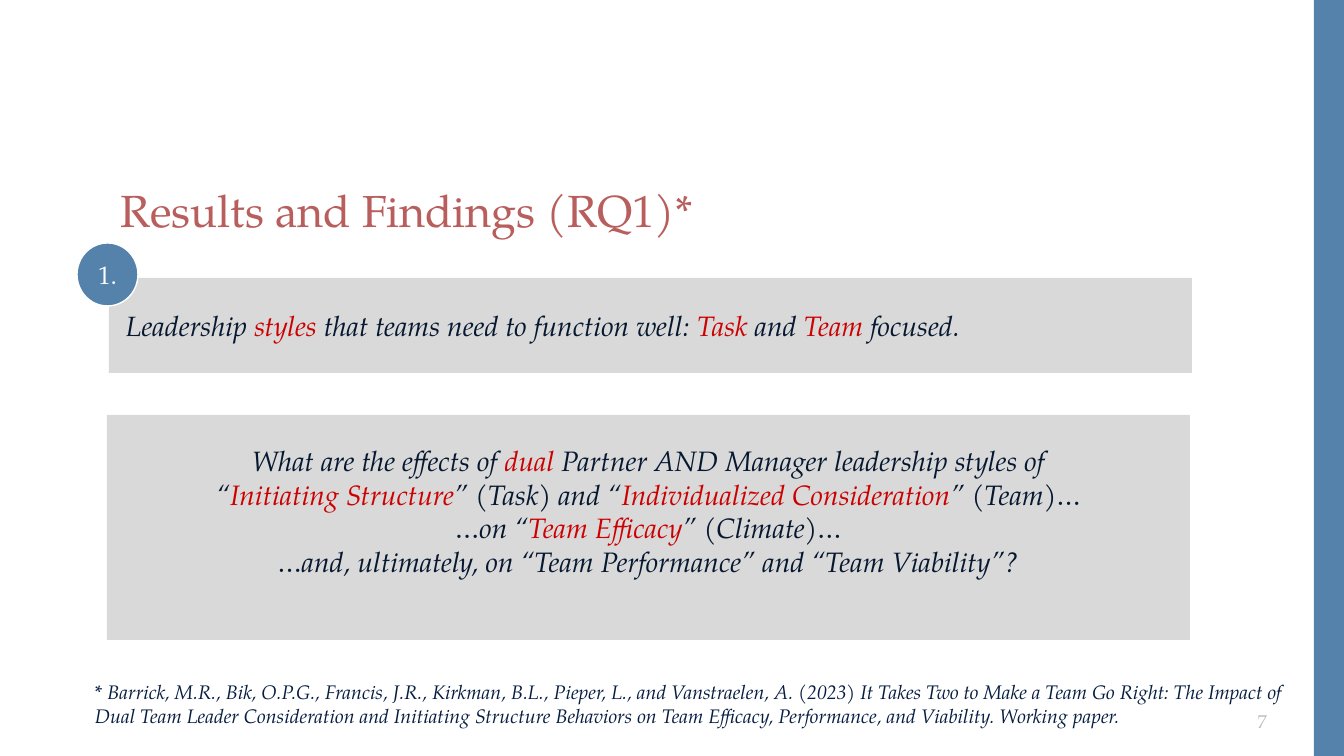
from dataclasses import dataclass

from pptx import Presentation
from pptx.dml.color import RGBColor
from pptx.enum.shapes import MSO_SHAPE as Shape
from pptx.enum.text import MSO_ANCHOR as Anchor, PP_ALIGN as Align
from pptx.util import Emu, Pt

EMU_PER_PX = 914400 / 100.8
ACCENT_MARK = "|"
LINE_BREAK = "\v"


@dataclass(frozen=True)
class Theme:
    font: str = "TeX Gyre Pagella"
    blue: str = "5482AB"
    white: str = "FFFFFF"
    panel: str = "D9D9D9"
    title: str = "B85E5C"
    body: str = "061830"
    accent: str = "CC0000"
    footnote: str = "061D41"
    number: str = "BFBFBF"
    title_size: float = 32
    body_size: float = 20
    badge_size: float = 18
    footnote_size: float = 14
    number_size: float = 13.3


THEME = Theme()

STYLES_FINDING = [
    "Leadership |styles| that teams need to function well: |Task| and |Team| focused."
]
EFFECTS_QUESTION = [
    "What are the effects of |dual| Partner AND Manager leadership styles of\v"
    "“|Initiating Structure|” (Task) and “|Individualized Consideration|” (Team)…",
    "…on “|Team Efficacy|” (Climate)…",
    "…and, ultimately, on “Team Performance” and “Team Viability”?",
]
CITATION = (
    "* Barrick, M.R., Bik, O.P.G., Francis, J.R., Kirkman, B.L., Pieper, L., and "
    "Vanstraelen, A. (2023) It Takes Two to Make a Team Go Right: The Impact of Dual "
    "Team Leader Consideration and Initiating Structure Behaviors on Team Efficacy, "
    "Performance, and Viability. Working paper."
)


def px(length):
    return Emu(round(length * EMU_PER_PX))


def color(value):
    return RGBColor.from_string(value)


def set_frame(shape, anchor, left=10, bottom=5):
    frame = shape.text_frame
    frame.word_wrap = True
    frame.vertical_anchor = anchor
    frame.margin_left, frame.margin_right = px(left), px(10)
    frame.margin_top, frame.margin_bottom = px(5), px(bottom)
    return frame


def style_paragraph(paragraph, size, text_color, align=Align.LEFT, italic=False):
    paragraph.alignment = align
    font = paragraph.font
    font.name, font.size, font.italic = THEME.font, Pt(size), italic
    font.color.rgb = color(text_color)


def add_marked_text(paragraph, text):
    for index, part in enumerate(text.split(ACCENT_MARK)):
        for line_index, line in enumerate(part.split(LINE_BREAK)):
            if line_index:
                paragraph.add_line_break()
            run = paragraph.add_run()
            run.text = line
            if index % 2:
                run.font.color.rgb = color(THEME.accent)


def add_label(slide, box, text, size, text_color, anchor=Anchor.TOP, **style):
    shape = slide.shapes.add_textbox(*map(px, box))
    paragraph = set_frame(shape, anchor).paragraphs[0]
    paragraph.text = text
    style_paragraph(paragraph, size, text_color, **style)
    return paragraph


def add_filled(shapes, kind, box, fill):
    shape = shapes.add_shape(kind, *map(px, box))
    shape.shadow.inherit = False
    shape.fill.solid()
    shape.fill.fore_color.rgb = color(fill)
    shape.line.fill.background()
    return shape


def add_panel(shapes, box, texts, align, **margins):
    shape = add_filled(shapes, Shape.RECTANGLE, box, THEME.panel)
    frame = set_frame(shape, Anchor.MIDDLE, **margins)
    for index, text in enumerate(texts):
        paragraph = frame.add_paragraph() if index else frame.paragraphs[0]
        style_paragraph(paragraph, THEME.body_size, THEME.body, align, italic=True)
        add_marked_text(paragraph, text)


def add_badge(shapes, box, text):
    shape = add_filled(shapes, Shape.OVAL, box, THEME.blue)
    shape.line.color.rgb = color(THEME.white)
    shape.line.width = Pt(1)
    paragraph = set_frame(shape, Anchor.MIDDLE).paragraphs[0]
    paragraph.text = text
    style_paragraph(paragraph, THEME.badge_size, THEME.white, Align.CENTER)


def main():
    presentation = Presentation()
    presentation.slide_width, presentation.slide_height = px(1344), px(756)
    slide = presentation.slides.add_slide(presentation.slide_layouts[6])

    add_filled(slide.shapes, Shape.RECTANGLE, (1314, 0, 30, 756), THEME.blue)
    title = add_label(slide, (111, 184, 1127, 103), "Results and Findings (RQ1)*",
                      THEME.title_size, THEME.title)
    title.line_spacing = 0.9
    add_label(slide, (1207, 701, 70, 40), "7", THEME.number_size, THEME.number,
              anchor=Anchor.MIDDLE, align=Align.RIGHT)

    finding = slide.shapes.add_group_shape().shapes
    add_panel(finding, (109, 278, 1083, 95), STYLES_FINDING, Align.LEFT, left=17)
    add_badge(finding, (77, 243, 61, 63), "1.")
    add_panel(slide.shapes, (107, 415, 1083, 225), EFFECTS_QUESTION, Align.CENTER,
              bottom=38)

    add_label(slide, (85, 675, 1230, 81), CITATION, THEME.footnote_size,
              THEME.footnote, italic=True)
    presentation.save("out.pptx")


if __name__ == "__main__":
    main()
